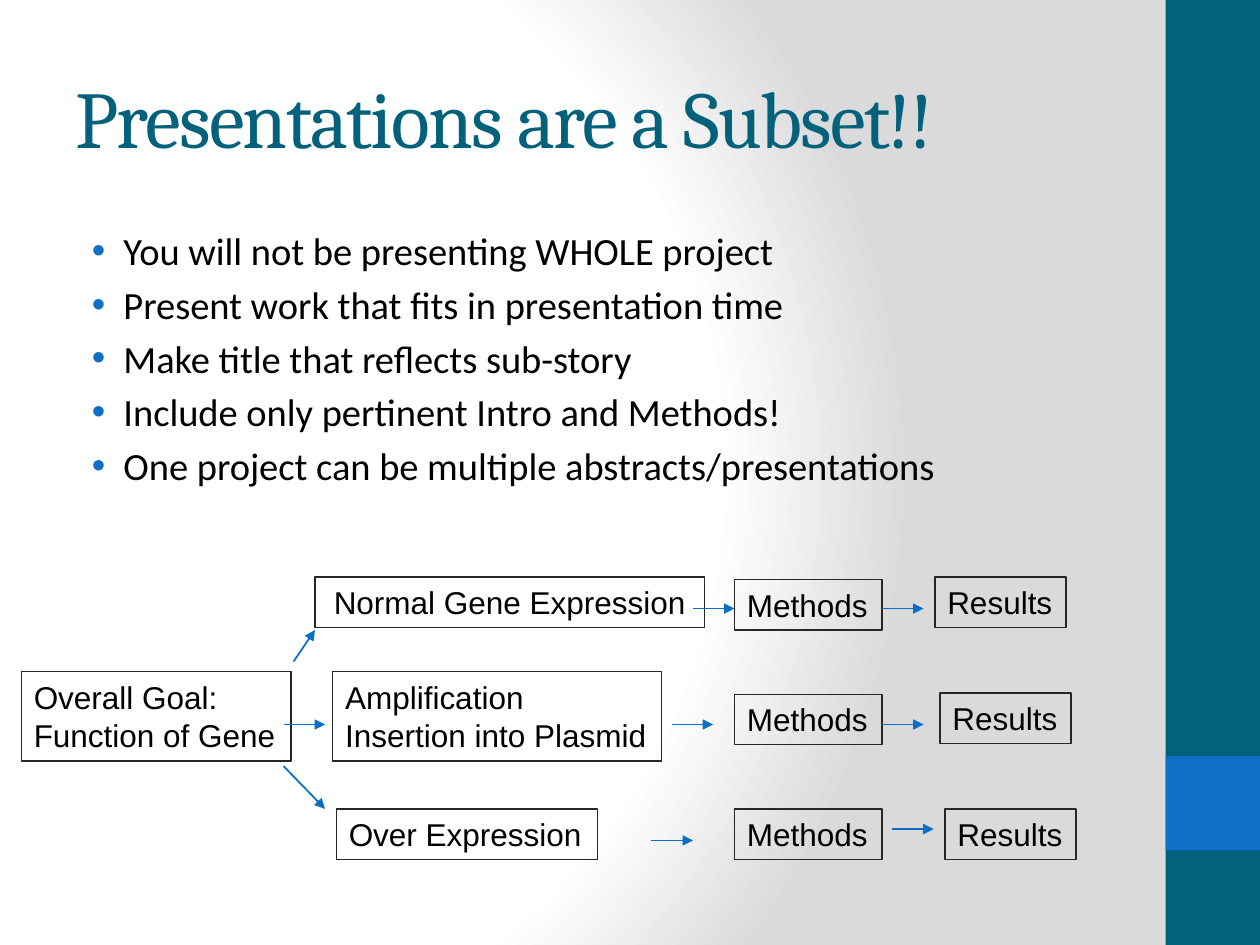
from lxml.etree import SubElement
from pptx import Presentation
from pptx.dml.color import RGBColor
from pptx.enum.shapes import MSO_CONNECTOR as CONNECTOR, MSO_SHAPE as SHAPE
from pptx.enum.text import MSO_ANCHOR as ANCHOR, MSO_AUTO_SIZE as AUTO_SIZE, PP_ALIGN as ALIGN
from pptx.oxml import parse_xml
from pptx.oxml.ns import nsdecls, qn
from pptx.util import Inches, Pt

TEAL = RGBColor(0x04, 0x61, 0x7B)
BLUE = RGBColor(0x0F, 0x6F, 0xC6)
ARROW_BLUE = RGBColor(0x0A, 0x6D, 0xC6)
OUTLINE = RGBColor(0x26, 0x26, 0x26)
BLACK = RGBColor(0, 0, 0)
WHITE = RGBColor(0xFF, 0xFF, 0xFF)
GREY = RGBColor(0xDA, 0xDA, 0xDA)


class SlideBuilder:
    title_font, body_font, box_font = "Cambria", "Calibri", "Arial"
    title_size, body_size, box_size = Pt(46), Pt(22), Pt(18)

    def __init__(self, slide):
        self.slide = slide

    def place(self, shape, left, top, width, height):
        shape.left, shape.top = Inches(left), Inches(top)
        shape.width, shape.height = Inches(width), Inches(height)

    def style(self, paragraph, name, size, color):
        paragraph.font.name = name
        paragraph.font.size = size
        paragraph.font.color.rgb = color

    def background(self, stops):
        marks = "".join(
            f'<a:gs pos="{pos * 1000}"><a:srgbClr val="{color}"/></a:gs>' for pos, color in stops)
        self.slide.element.cSld.insert(0, parse_xml(
            f'<p:bg {nsdecls("p", "a")}><p:bgPr><a:gradFill rotWithShape="1">'
            f'<a:gsLst>{marks}</a:gsLst><a:path path="circle">'
            '<a:fillToRect l="20000" t="50000" r="100000" b="50000"/></a:path>'
            '</a:gradFill><a:effectLst/></p:bgPr></p:bg>'))

    def title(self, text, *area):
        heading = self.slide.shapes.title
        self.place(heading, *area)
        heading.text_frame.text = text
        heading.text_frame.vertical_anchor = ANCHOR.MIDDLE
        paragraph = heading.text_frame.paragraphs[0]
        paragraph.alignment = ALIGN.LEFT
        self.style(paragraph, self.title_font, self.title_size, TEAL)
        paragraph.runs[0].font._element.set("spc", "-100")

    def bullets(self, lines, *area):
        body = self.slide.placeholders[1]
        self.place(body, *area)
        body.text_frame.text = "\n".join(lines)
        for paragraph in body.text_frame.paragraphs:
            self.style(paragraph, self.body_font, self.body_size, BLACK)
            props = paragraph._p.get_or_add_pPr()
            props.set("marL", str(Inches(0.38)))
            props.set("indent", str(Inches(-0.25)))
            props.insert(0, parse_xml(
                f'<a:buClr {nsdecls("a")}><a:srgbClr val="{BLUE}"/></a:buClr>'))

    def rectangle(self, left, top, width, height):
        shape = self.slide.shapes.add_shape(
            SHAPE.RECTANGLE, Inches(left), Inches(top), Inches(width), Inches(height))
        shape.shadow.inherit = False
        return shape

    def bar(self, color, *area):
        shape = self.rectangle(*area)
        shape.fill.solid()
        shape.fill.fore_color.rgb = color
        shape.line.fill.background()

    def box(self, text, *area, align=ALIGN.LEFT):
        shape = self.rectangle(*area)
        shape.fill.background()
        shape.line.color.rgb = OUTLINE
        shape.line.width = Pt(0.75)
        frame = shape.text_frame
        frame.text = text
        frame.word_wrap = False
        frame.auto_size = AUTO_SIZE.SHAPE_TO_FIT_TEXT
        frame.vertical_anchor = ANCHOR.TOP
        for paragraph in frame.paragraphs:
            paragraph.alignment = align
            self.style(paragraph, self.box_font, self.box_size, BLACK)

    def arrow(self, x, y, dx=0.33, dy=0):
        line = self.slide.shapes.add_connector(
            CONNECTOR.STRAIGHT, Inches(x), Inches(y), Inches(x + dx), Inches(y + dy))
        line.line.color.rgb = ARROW_BLUE
        line.line.width = Pt(1)
        SubElement(line.line._get_or_add_ln(), qn("a:tailEnd"), type="triangle")
        SubElement(line._element.spPr, qn("a:effectLst"))


def main():
    deck = Presentation()
    deck.slide_width, deck.slide_height = Inches(10), Inches(7.5)
    page = SlideBuilder(deck.slides.add_slide(deck.slide_layouts[1]))

    # Background and side band
    page.background([(0, WHITE), (75, WHITE), (100, GREY)])
    page.bar(TEAL, 9.25, 0, 0.75, 7.5)
    page.bar(BLUE, 9.25, 6, 0.75, 0.75)

    # Title and list
    page.title("Presentations are a Subset!!", 0.5, 0.3, 8.33, 1.25)
    page.bullets([
        "You will not be presenting WHOLE project",
        "Present work that fits in presentation time",
        "Make title that reflects sub-story",
        "Include only pertinent Intro and Methods!",
        "One project can be multiple abstracts/presentations",
    ], 0.5, 1.75, 8.33, 5.25)

    # Goal and its three sub-stories
    page.box("Overall Goal:\nFunction of Gene", 0.17, 5.33, 2.14, 0.71)
    page.box("Normal Gene Expression", 2.5, 4.58, 3.09, 0.4, align=ALIGN.CENTER)
    page.box("Amplification\vInsertion into Plasmid", 2.64, 5.33, 2.61, 0.71)
    page.box("Over Expression", 2.67, 6.42, 2.07, 0.4)

    # Methods and results of each sub-story
    for methods_top, results_left, results_top in (
            (4.6, 7.42, 4.58), (5.51, 7.46, 5.5), (6.42, 7.5, 6.42)):
        page.box("Methods", 5.83, methods_top, 1.17, 0.4)
        page.box("Results", results_left, results_top, 1.04, 0.4)

    # Arrows from the goal
    page.arrow(2.33, 5.25, 0.17, -0.25)
    page.arrow(2.25, 5.75)
    page.arrow(2.25, 6.08, 0.33, 0.34)

    # Arrows along each sub-story
    for x, y in ((5.5, 4.83), (7, 4.83), (5.33, 5.75), (7, 5.75), (5.17, 6.67), (7.08, 6.58)):
        page.arrow(x, y)

    deck.save("out.pptx")


if __name__ == "__main__":
    main()
